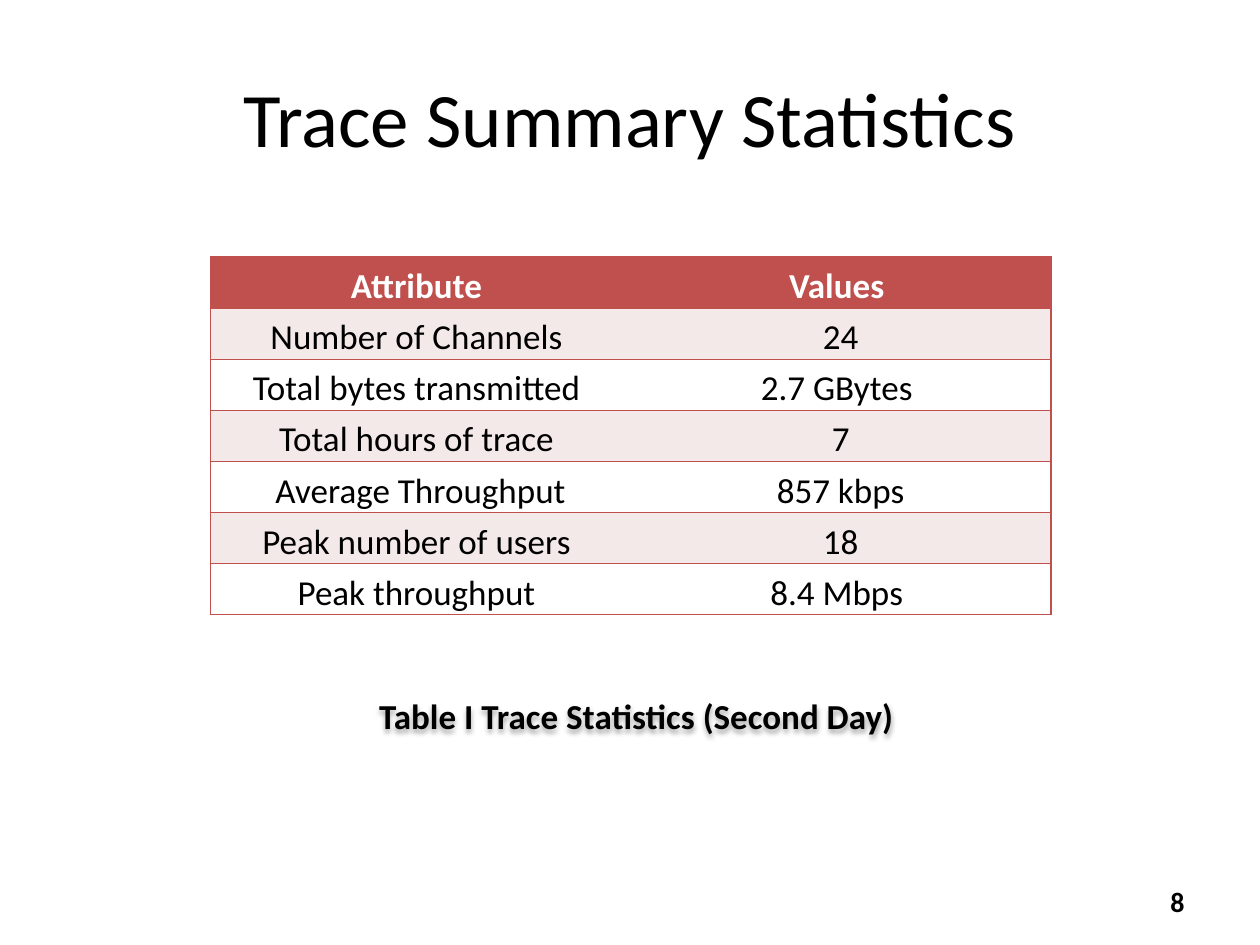
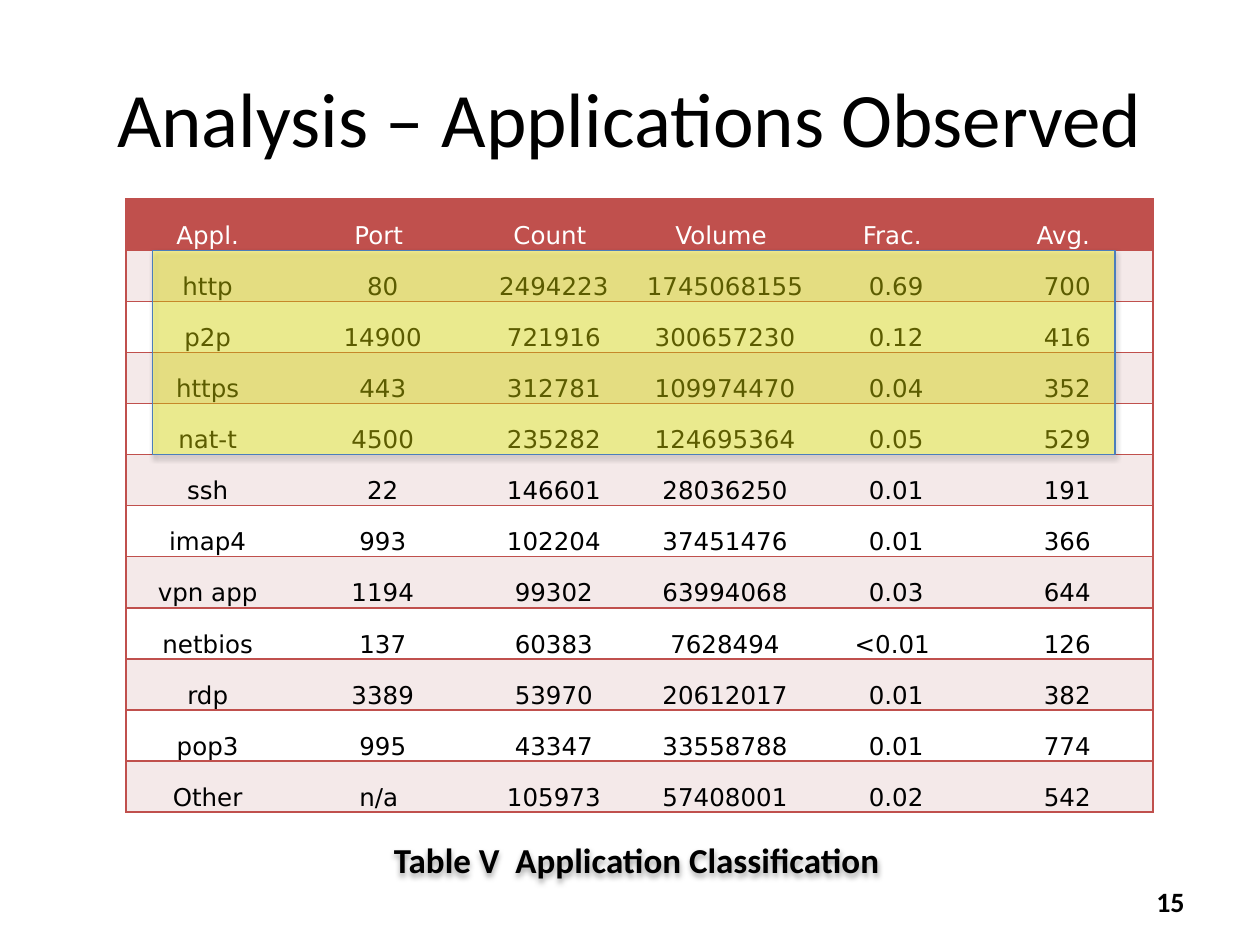
from dataclasses import dataclass

from lxml.etree import SubElement
from pptx import Presentation
from pptx.dml.color import RGBColor
from pptx.enum.shapes import MSO_SHAPE as Shape
from pptx.enum.text import MSO_ANCHOR as Anchor, PP_ALIGN as Align
from pptx.oxml.ns import qn
from pptx.util import Inches, Pt


@dataclass(frozen=True)
class Theme:
    ink: str = "000000"
    paper: str = "FFFFFF"
    accent: str = "C0504D"
    band: str = "F4E9E9"
    marker: str = "FFFF00"
    marker_line: str = "4B7EBC"
    marker_alpha: int = 36
    font: str = "Calibri"
    title_size: int = 44
    caption_size: int = 20
    number_size: int = 16
    border: float = 1
    marker_border: float = 0.75


THEME = Theme()
SLIDE_SIZE = (10, 7.5)
TITLE_AREA = (0.5, 0.3, 9, 1.25)
NUMBER_AREA = (7.17, 6.95, 2.33, 0.4)
SHADOW = dict(blur=3.1, distance=1.8, angle=90, alpha=35)

SLIDES = [
    dict(
        title="Trace Summary Statistics",
        number="8",
        caption="Table I Trace Statistics (Second Day)",
        caption_area=(2.58, 5.35, 4.94, 0.66),
        table_area=(1.67, 2.04, 6.67, 2.84),
        cell_format=dict(size=20),
        bold_header=True,
        rows=[
            ("Attribute ", "Values "),
            ("Number of Channels ", "24"),
            ("Total bytes transmitted ", "2.7 GBytes "),
            ("Total hours of trace ", "7"),
            ("Average Throughput", "857 kbps"),
            ("Peak number of users ", "18"),
            ("Peak throughput ", "8.4 Mbps "),
        ],
    ),
    dict(
        title="Analysis – Applications Observed",
        number="15",
        caption="Table V  Application Classification ",
        caption_area=(2.31, 6.49, 5.55, 0.66),
        table_area=(1, 1.58, 8.15, 4.87),
        cell_format=dict(size=14, font="DejaVu Sans"),
        bold_header=False,
        marked=dict(first_row=1, row_count=4, left=1.21, width=7.64),
        rows=[
            ("Appl. ", "Port ", "Count ", "Volume ", "Frac. ", "Avg. "),
            ("http ", "80", "2494223", "1745068155", "0.69", "700"),
            ("p2p ", "14900", "721916", "300657230", "0.12", "416"),
            ("https ", "443", "312781", "109974470", "0.04", "352"),
            ("nat-t ", "4500", "235282", "124695364", "0.05", "529"),
            ("ssh ", "22", "146601", "28036250", "0.01", "191"),
            ("imap4 ", "993", "102204", "37451476", "0.01", "366"),
            ("vpn app ", "1194", "99302", "63994068", "0.03", "644"),
            ("netbios ", "137", "60383", "7628494", "<0.01 ", "126"),
            ("rdp ", "3389", "53970", "20612017", "0.01", "382"),
            ("pop3 ", "995", "43347", "33558788", "0.01", "774"),
            ("Other ", "n/a ", "105973", "57408001", "0.02", "542"),
        ],
    ),
]


def inches(area):
    return [Inches(length) for length in area]


def rgb(color):
    return RGBColor.from_string(color)


def write(frame, text, *, size, font=THEME.font, color=THEME.ink, bold=False,
          align=Align.CENTER):
    para = frame.paragraphs[0]
    para.alignment = align
    span = para.add_run()
    span.text = text
    span.font.name = font
    span.font.size = Pt(size)
    span.font.bold = bold
    span.font.color.rgb = rgb(color)


def add_text(page, area, text, **text_format):
    box = page.shapes.add_textbox(*inches(area))
    box.text_frame.word_wrap = True
    box.text_frame.vertical_anchor = Anchor.MIDDLE
    write(box.text_frame, text, **text_format)
    return box


def add_shadow(shape):
    shape.shadow.inherit = False
    effects = shape._element.spPr.find(qn("a:effectLst"))
    shadow = SubElement(effects, qn("a:outerShdw"), {
        "blurRad": str(Pt(SHADOW["blur"])),
        "dist": str(Pt(SHADOW["distance"])),
        "dir": str(SHADOW["angle"] * 60000),
        "rotWithShape": "0",
    })
    color = SubElement(shadow, qn("a:srgbClr"), val=THEME.ink)
    SubElement(color, qn("a:alpha"), val=str(SHADOW["alpha"] * 1000))


def set_borders(cell, sides):
    """Rule the given sides (letters of LRTB) and clear the others."""
    properties = cell._tc.get_or_add_tcPr()
    for side in "LRTB":
        line = SubElement(properties, qn(f"a:ln{side}"), w=str(Pt(THEME.border)))
        if side in sides:
            fill = SubElement(line, qn("a:solidFill"))
            SubElement(fill, qn("a:srgbClr"), val=THEME.accent)
        else:
            SubElement(line, qn("a:noFill"))


def add_banded_table(page, area, rows, cell_format, bold_header):
    last_column = len(rows[0]) - 1
    table = page.shapes.add_table(len(rows), len(rows[0]), *inches(area)).table
    for column in table.columns:
        column.width = Inches(area[2] / len(rows[0]))
    for row_index, row in enumerate(rows):
        header = row_index == 0
        fill = THEME.accent if header else (THEME.paper, THEME.band)[row_index % 2]
        table.rows[row_index].height = Inches(area[3] / len(rows))
        for column_index, text in enumerate(row):
            cell = table.cell(row_index, column_index)
            cell.margin_left = cell.margin_right = cell.margin_top = Inches(0.01)
            cell.margin_bottom = 0
            cell.vertical_anchor = Anchor.BOTTOM
            set_borders(cell, "TB" + "L" * (column_index == 0)
                        + "R" * (column_index == last_column))
            cell.fill.solid()
            cell.fill.fore_color.rgb = rgb(fill)
            write(cell.text_frame, text, bold=header and bold_header,
                  color=THEME.paper if header else THEME.ink, **cell_format)


def add_marker(page, table_area, table_rows, first_row, row_count, left, width):
    """Lay a translucent highlight over a run of table rows."""
    row_height = table_area[3] / table_rows
    top = table_area[1] + first_row * row_height
    marker = page.shapes.add_shape(
        Shape.RECTANGLE, *inches((left, top, width, row_count * row_height)))
    marker.fill.solid()
    marker.fill.fore_color.rgb = rgb(THEME.marker)
    color = marker._element.spPr.find(qn("a:solidFill"))[0]
    SubElement(color, qn("a:alpha"), val=str(THEME.marker_alpha * 1000))
    marker.line.color.rgb = rgb(THEME.marker_line)
    marker.line.width = Pt(THEME.marker_border)
    add_shadow(marker)


def build_slide(deck, content):
    page = deck.slides.add_slide(deck.slide_layouts[6])
    rows, table_area = content["rows"], content["table_area"]
    add_text(page, TITLE_AREA, content["title"], size=THEME.title_size)
    add_banded_table(page, table_area, rows, content["cell_format"],
                     content["bold_header"])
    if "marked" in content:
        add_marker(page, table_area, len(rows), **content["marked"])
    caption = add_text(page, content["caption_area"], content["caption"],
                       size=THEME.caption_size, bold=True)
    add_shadow(caption)
    add_text(page, NUMBER_AREA, content["number"], size=THEME.number_size,
             bold=True, align=Align.RIGHT)


def main():
    deck = Presentation()
    deck.slide_width, deck.slide_height = inches(SLIDE_SIZE)
    for content in SLIDES:
        build_slide(deck, content)
    deck.save("out.pptx")


if __name__ == "__main__":
    main()
